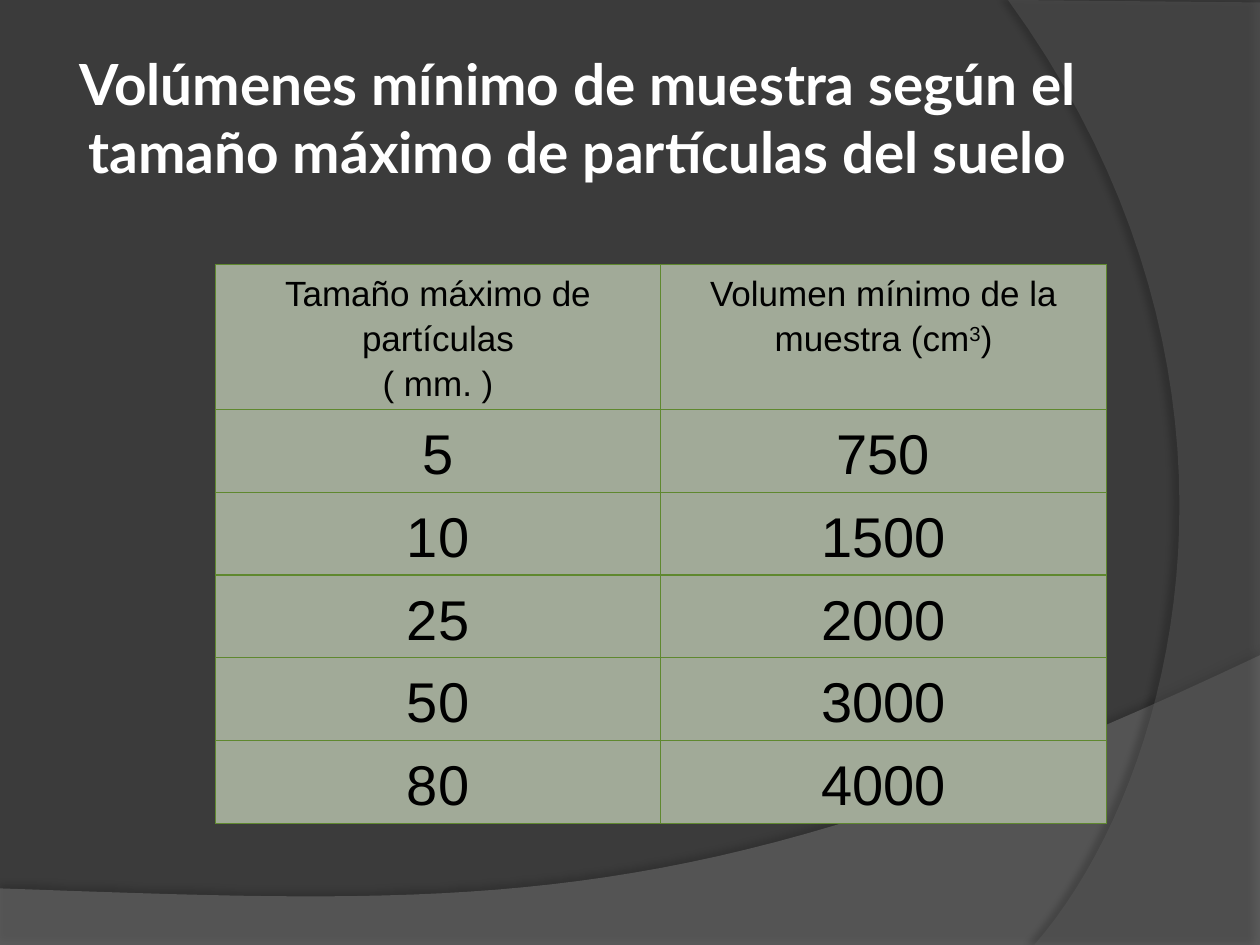
from lxml import etree
from pptx import Presentation
from pptx.dml.color import RGBColor
from pptx.enum.text import MSO_ANCHOR, PP_ALIGN
from pptx.oxml.ns import qn
from pptx.util import Cm, Pt

CENTER = PP_ALIGN.CENTER
MIDDLE = MSO_ANCHOR.MIDDLE

# Content
TITLE = "Volúmenes mínimo de muestra según el tamaño máximo de partículas del suelo"
# Each header is a list of paragraphs, each paragraph a list of runs
HEADERS = [
    [["Tamaño máximo de partículas"], ["( mm. )"]],
    [["Volumen mínimo de la muestra (cm", "3", ")"]],
]
SUPERSCRIPT = "3"
VOLUMES = [(5, 750), (10, 1500), (25, 2000), (50, 3000), (80, 4000)]

# Background waves in cm: straight corners, then one Bézier curve
WAVES = [
    dict(corners=[(0, 17.91), (0, 19.05), (25.4, 19.05)],
         curve=[(25.4, 13.21), (14.2, 18.52), (9.93, 18.26), (0, 17.91)],
         color="7F7F7F", alpha=45, shadow=(35, 4, 3.5, 270)),
    dict(corners=[(25.4, 0.05), (25.4, 19.05)],
         curve=[(20.85, 19.05), (23.75, 15.72), (25.86, 7.62), (20.32, 0)],
         color="5E5E5E", alpha=40, shadow=(45, 4, 4, 180)),
]
CURVE_STEPS = 40

TABLE_LEFT, TABLE_TOP = 4.34, 5.33
COLUMN_WIDTH, HEADER_HEIGHT, ROW_HEIGHT = 8.98, 2.92, 1.67
CELL_FILL, BORDER = "A1AA98", "5F882F"


def rgb(color):
    return RGBColor.from_string(color)


def add_child(parent, tag, **attributes):
    child = etree.SubElement(parent, qn(tag))
    for name, value in attributes.items():
        child.set(name, str(value))
    return child


def bezier(points, t):
    weights = ((1 - t) ** 3, 3 * t * (1 - t) ** 2, 3 * t ** 2 * (1 - t), t ** 3)
    return tuple(sum(w * p[axis] for w, p in zip(weights, points)) for axis in (0, 1))


def add_wave(slide, corners, curve, color, alpha, shadow):
    points = corners + [bezier(curve, i / CURVE_STEPS) for i in range(CURVE_STEPS + 1)]
    points = [(Cm(x), Cm(y)) for x, y in points]
    builder = slide.shapes.build_freeform(*points[0])
    builder.add_line_segments(points[1:], close=True)
    shape = builder.convert_to_shape()
    shape.fill.solid()
    shape.fill.fore_color.rgb = rgb(color)
    shape.line.fill.background()
    properties = shape._element.spPr
    fill_color = properties.find(qn("a:solidFill"))[0]
    add_child(fill_color, "a:alpha", val=alpha * 1000)
    # Soft shadow along the edge
    opacity, blur, distance, direction = shadow
    effects = add_child(properties, "a:effectLst")
    outer = add_child(effects, "a:outerShdw", blurRad=Pt(blur), dist=Pt(distance),
                      dir=direction * 60000, algn="ctr", rotWithShape=0)
    shadow_color = add_child(outer, "a:srgbClr", val="000000")
    add_child(shadow_color, "a:alpha", val=opacity * 1000)


def format_cell(cell, paragraphs, size):
    cell.margin_left = cell.margin_right = Cm(0.1)
    cell.margin_top = cell.margin_bottom = Cm(0.1)
    text_frame = cell.text_frame
    for index, runs in enumerate(paragraphs):
        paragraph = text_frame.add_paragraph() if index else text_frame.paragraphs[0]
        paragraph.alignment = CENTER
        paragraph.line_spacing = 1.15
        for text in runs:
            run = paragraph.add_run()
            run.text = text
            run.font.name = "Arial"
            run.font.size = Pt(size)
            run.font.color.rgb = rgb("000000")
            if text == SUPERSCRIPT:
                run.font._element.set("baseline", "30000")
    # Borders come before the fill in the cell properties
    properties = cell._tc.get_or_add_tcPr()
    for side in ("a:lnL", "a:lnR", "a:lnT", "a:lnB"):
        line = add_child(properties, side, w=Pt(0.75))
        add_child(add_child(line, "a:solidFill"), "a:srgbClr", val=BORDER)
    cell.fill.solid()
    cell.fill.fore_color.rgb = rgb(CELL_FILL)


def add_title(slide):
    title = slide.shapes.title
    title.left, title.top, title.width, title.height = Cm(1.27), Cm(0.76), Cm(20.75), Cm(3.18)
    text_frame = title.text_frame
    text_frame.text = TITLE
    text_frame.word_wrap = True
    text_frame.vertical_anchor = MIDDLE
    text_frame.margin_left = text_frame.margin_right = Cm(0.13)
    text_frame.margin_top = text_frame.margin_bottom = Cm(0.13)
    paragraph = text_frame.paragraphs[0]
    paragraph.alignment = CENTER
    font = paragraph.runs[0].font
    font.name, font.size, font.bold = "Lato", Pt(32.4), True
    font.color.rgb = rgb("FFFFFF")


def add_volume_table(slide):
    rows = [HEADERS] + [[[[str(value)]] for value in pair] for pair in VOLUMES]
    heights = [HEADER_HEIGHT] + [ROW_HEIGHT] * len(VOLUMES)
    table = slide.shapes.add_table(
        len(rows), len(HEADERS), Cm(TABLE_LEFT), Cm(TABLE_TOP),
        Cm(COLUMN_WIDTH * len(HEADERS)), Cm(sum(heights))).table
    for column in table.columns:
        column.width = Cm(COLUMN_WIDTH)
    for row_index, (row, height) in enumerate(zip(rows, heights)):
        table.rows[row_index].height = Cm(height)
        for column_index, paragraphs in enumerate(row):
            size = 32 if row_index else 20
            format_cell(table.cell(row_index, column_index), paragraphs, size)


def main():
    presentation = Presentation()
    presentation.slide_width, presentation.slide_height = Cm(25.4), Cm(19.05)
    slide = presentation.slides.add_slide(presentation.slide_layouts[5])
    slide.background.fill.solid()
    slide.background.fill.fore_color.rgb = rgb("3B3B3B")
    for wave in WAVES:
        add_wave(slide, **wave)
    add_title(slide)
    # Keep the title in front of the waves
    slide.shapes._spTree.append(slide.shapes.title._element)
    add_volume_table(slide)
    presentation.save("out.pptx")


if __name__ == "__main__":
    main()
